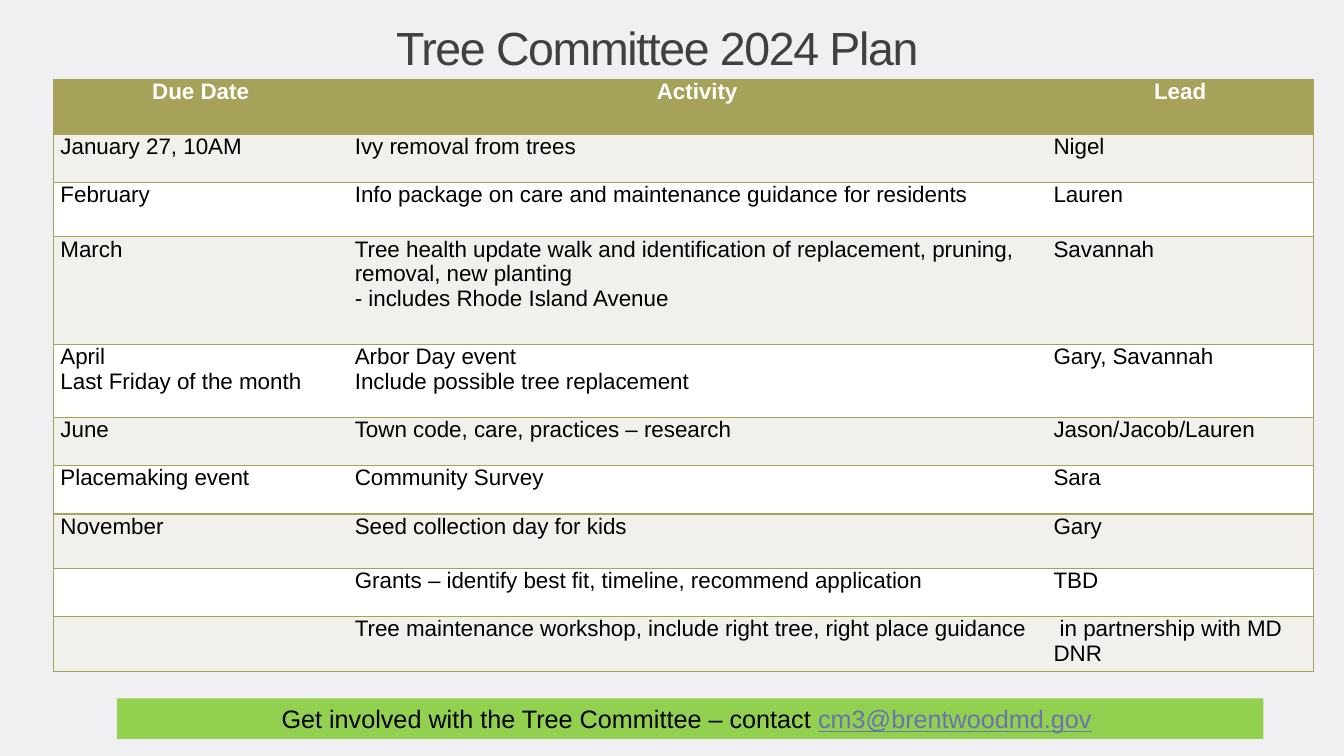
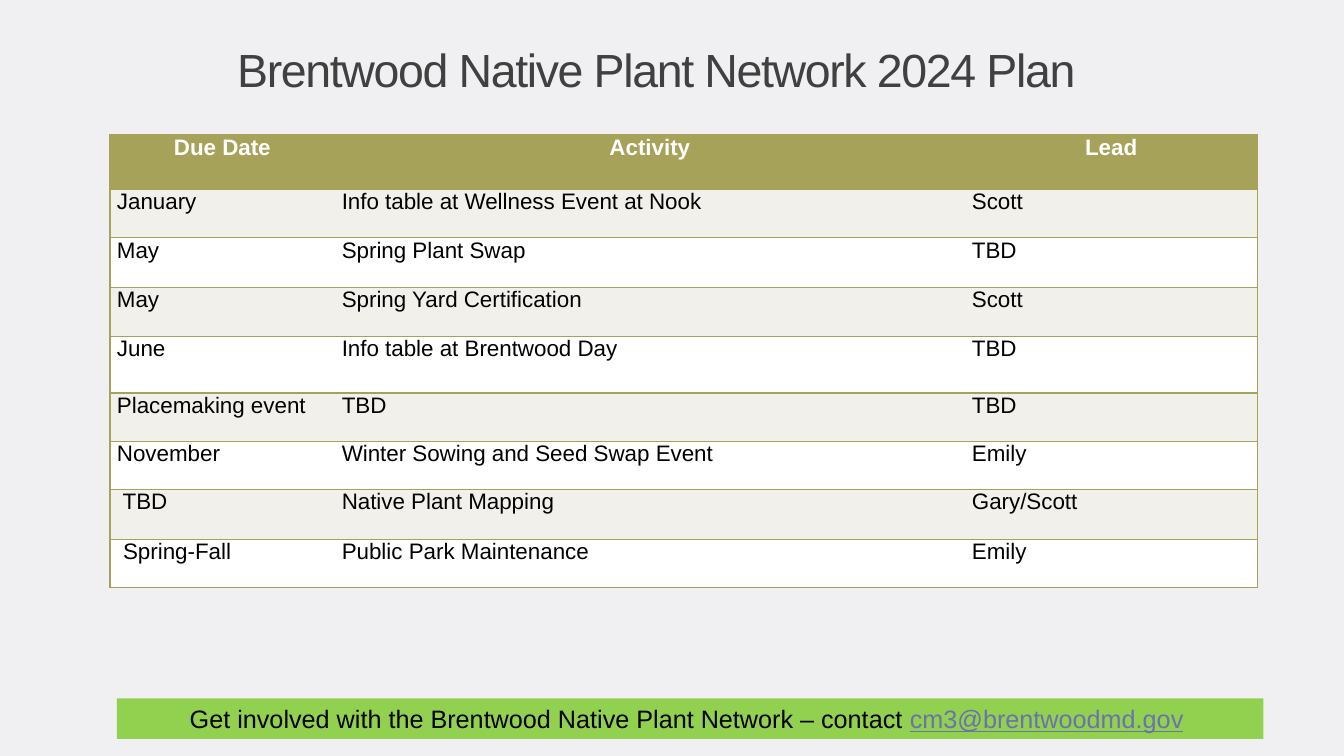
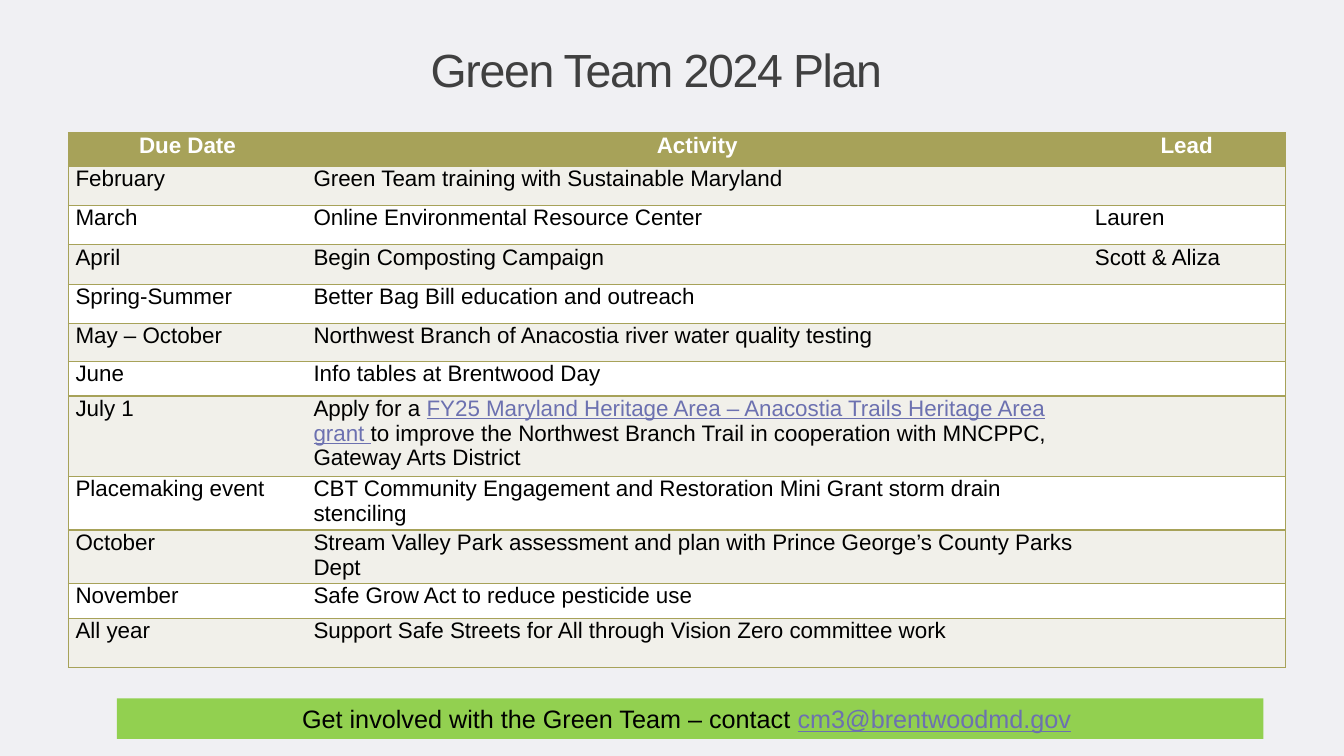
from dataclasses import dataclass

from lxml import etree
from pptx import Presentation
from pptx.dml.color import RGBColor as Rgb
from pptx.enum.shapes import MSO_SHAPE as Shape
from pptx.enum.text import MSO_ANCHOR as Anchor, MSO_AUTO_SIZE as Auto, PP_ALIGN as Align
from pptx.oxml.ns import qn
from pptx.util import Inches, Pt


# Colours, fonts and sizes shared by all slides
@dataclass(frozen=True)
class Theme:
    font: str = "Arial"
    page: str = "F0F0F3"
    title: str = "404040"
    olive: str = "A7A259"
    pale: str = "F1F0EA"
    white: str = "FFFFFF"
    black: str = "000000"
    green: str = "92D050"
    link: str = "6C71B0"
    head_pt: float = 33.2
    cell_pt: float = 16
    bar_pt: float = 18
    line_pt: float = 1


LOOK = Theme()
HEADS = ("Due Date", "Activity", "Lead")
MAIL = "cm3@brentwoodmd.gov"

# One entry per slide; text between | marks is shown as a link,
# and each row starts with its height
PLANS = [
    dict(
        title="Tree Committee 2024 Plan", group="Tree Committee",
        spot=(0.27, 0.14), left=0.53, top=0.79, cols=(2.92, 6.93, 2.65), head=0.54,
        rows=[
            (0.48, "January 27, 10AM", "Ivy removal from trees", "Nigel"),
            (0.54, "February", "Info package on care and maintenance guidance for residents",
             "Lauren"),
            (1.07, "March", "Tree health update walk and identification of replacement, "
             "pruning, removal, new planting\n- includes Rhode Island Avenue", "Savannah"),
            (0.72, "April\nLast Friday of the month",
             "Arbor Day event\nInclude possible tree replacement", "Gary, Savannah"),
            (0.48, "June", "Town code, care, practices – research", "Jason/Jacob/Lauren"),
            (0.48, "Placemaking event", "Community Survey", "Sara"),
            (0.54, "November", "Seed collection day for kids", "Gary"),
            (0.48, "", "Grants – identify best fit, timeline, recommend application", "TBD"),
            (0.54, "", "Tree maintenance workshop, include right tree, right place guidance",
             " in partnership with MD DNR"),
        ],
    ),
    dict(
        title="Brentwood Native Plant Network 2024 Plan", group="Brentwood Native Plant Network",
        spot=(0.26, 0.35), left=1.09, top=1.34, cols=(2.23, 6.25, 2.9), head=0.54,
        rows=[
            (0.48, "January", "Info table at Wellness Event at Nook", "Scott"),
            (0.49, "May", "Spring Plant Swap", "TBD"),
            (0.49, "May", "Spring Yard Certification", "Scott"),
            (0.56, "June", "Info table at Brentwood Day", "TBD"),
            (0.48, "Placemaking event", "TBD", "TBD"),
            (0.48, "November", "Winter Sowing and Seed Swap Event", "Emily"),
            (0.49, " TBD", "Native Plant Mapping", "Gary/Scott"),
            (0.48, " Spring-Fall", "Public Park Maintenance", "Emily"),
        ],
    ),
    dict(
        title="Green Team 2024 Plan", group="Green Team",
        spot=(0.26, 0.35), left=0.68, top=1.32, cols=(2.36, 7.75, 1.96), head=0.33,
        rows=[
            (0.39, "February", "Green Team training with Sustainable Maryland", ""),
            (0.39, "March", "Online Environmental Resource Center", "Lauren"),
            (0.39, "April", "Begin Composting Campaign", "Scott & Aliza"),
            (0.39, "Spring-Summer", "Better Bag Bill education and outreach", ""),
            (0.38, "May – October", "Northwest Branch of Anacostia river water quality testing",
             ""),
            (0.34, "June", "Info tables at Brentwood Day", ""),
            (0.8, "July 1", "Apply for a |FY25 Maryland Heritage Area – Anacostia Trails "
             "Heritage Area grant |to improve the Northwest Branch Trail in cooperation "
             "with MNCPPC, Gateway Arts District", ""),
            (0.53, "Placemaking event",
             "CBT Community Engagement and Restoration Mini Grant storm drain stenciling", ""),
            (0.53, "October", "Stream Valley Park assessment and plan with "
             "Prince George’s County Parks Dept", ""),
            (0.35, "November", "Safe Grow Act to reduce pesticide use", ""),
            (0.48, "All year", "Support Safe Streets for All through Vision Zero committee work",
             ""),
        ],
    ),
]


def assign(item, **vals):
    for name, val in vals.items():
        setattr(item, name, val)


def paint(fill, color):
    fill.solid()
    fill.fore_color.rgb = Rgb.from_string(color)


def write(frame, text, size, color, align=Align.LEFT, bold=False):
    """Fill a frame: one paragraph a line, link parts between | marks."""
    for num, line in enumerate(text.split("\n")):
        para = frame.add_paragraph() if num else frame.paragraphs[0]
        para.alignment = align
        for part, words in enumerate(line.split("|")):
            if not words:
                continue
            run = para.add_run()
            run.text = words
            linked = part % 2 == 1
            assign(run.font, name=LOOK.font, size=Pt(size), bold=bold, underline=linked)
            run.font.color.rgb = Rgb.from_string(LOOK.link if linked else color)


def add_title(slide, text, spot):
    box = slide.shapes.title
    assign(box, left=Inches(spot[0]), top=Inches(spot[1]),
           width=Inches(12.5), height=Inches(0.66))
    frame = box.text_frame
    assign(frame, word_wrap=True, auto_size=Auto.NONE, vertical_anchor=Anchor.MIDDLE)
    write(frame, text, LOOK.head_pt, LOOK.title, Align.CENTER)
    for run in frame.paragraphs[0].runs:
        run.font._element.set("spc", "-100")


def add_edges(cell, sides):
    """Draw the named sides in olive and clear the others."""
    props = cell._tc.get_or_add_tcPr()
    for side in "LRTB":
        edge = etree.SubElement(props, qn(f"a:ln{side}"), w=str(Pt(LOOK.line_pt)))
        if side in sides:
            fill = etree.SubElement(edge, qn("a:solidFill"))
            etree.SubElement(fill, qn("a:srgbClr"), val=LOOK.olive)
        else:
            etree.SubElement(edge, qn("a:noFill"))


def add_plan(slide, plan):
    rows = [(plan["head"], *HEADS), *plan["rows"]]
    cols = plan["cols"]
    sizes = [plan["left"], plan["top"], sum(cols), sum(row[0] for row in rows)]
    table = slide.shapes.add_table(len(rows), len(cols), *map(Inches, sizes)).table
    for col, width in zip(table.columns, cols):
        col.width = Inches(width)
    for r, (high, *texts) in enumerate(rows):
        table.rows[r].height = Inches(high)
        for c, text in enumerate(texts):
            cell = table.cell(r, c)
            assign(cell, margin_left=Inches(0.07), margin_right=Inches(0.07),
                   margin_top=0, margin_bottom=0, vertical_anchor=Anchor.TOP)
            add_edges(cell, "TB" + ("L", "", "R")[c])
            if r == 0:
                paint(cell.fill, LOOK.olive)
                write(cell.text_frame, text, LOOK.cell_pt, LOOK.white, Align.CENTER, True)
            else:
                paint(cell.fill, LOOK.pale if r % 2 else LOOK.white)
                write(cell.text_frame, text, LOOK.cell_pt, LOOK.black)


def add_bar(slide, group):
    bar = slide.shapes.add_shape(Shape.RECTANGLE, *map(Inches, (1.16, 6.93, 11.37, 0.4)))
    bar.shadow.inherit = False
    paint(bar.fill, LOOK.green)
    bar.line.fill.background()
    assign(bar.text_frame, word_wrap=True, vertical_anchor=Anchor.MIDDLE)
    text = f"Get involved with the {group} – contact |{MAIL}| "
    write(bar.text_frame, text, LOOK.bar_pt, LOOK.black, Align.CENTER)


def main():
    deck = Presentation()
    assign(deck, slide_width=Inches(13.33), slide_height=Inches(7.5))
    paint(deck.slide_master.background.fill, LOOK.page)
    layout = deck.slide_layouts.get_by_name("Title Only")
    for plan in PLANS:
        slide = deck.slides.add_slide(layout)
        add_title(slide, plan["title"], plan["spot"])
        add_plan(slide, plan)
        add_bar(slide, plan["group"])
    deck.save("out.pptx")


if __name__ == "__main__":
    main()
